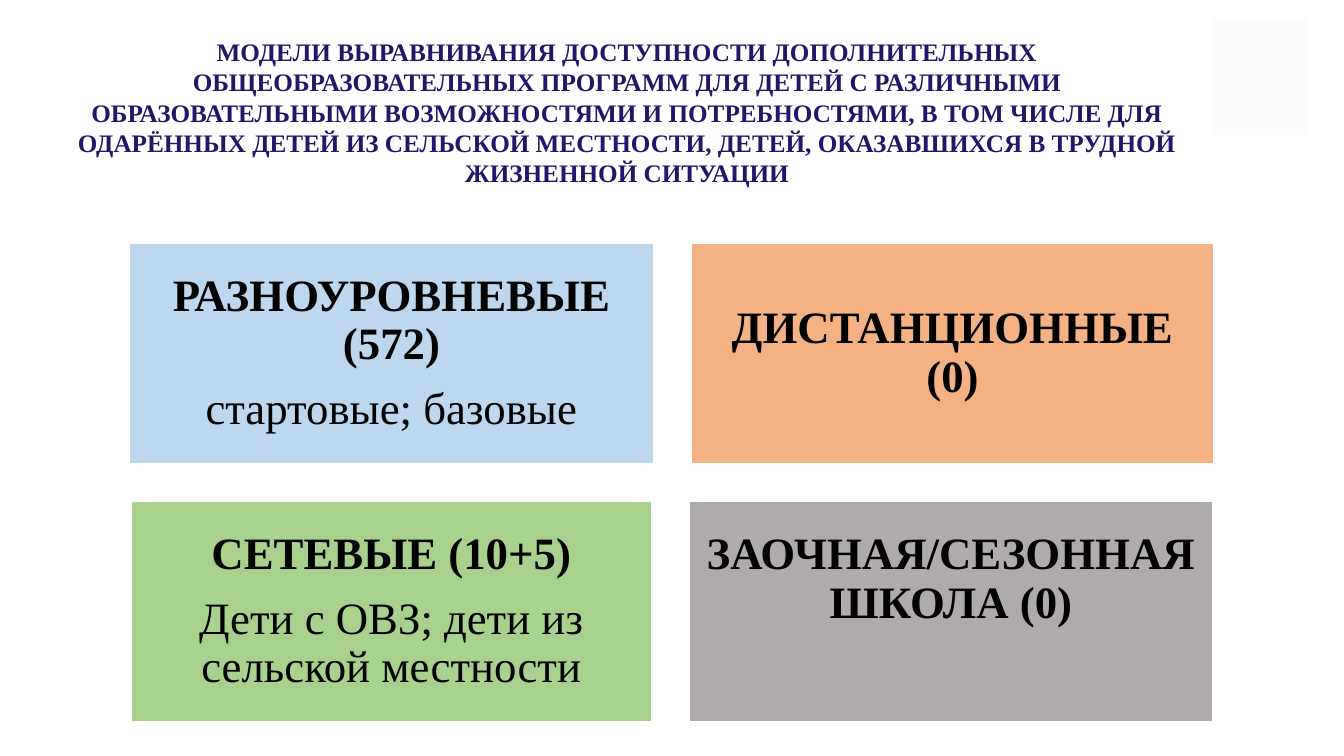
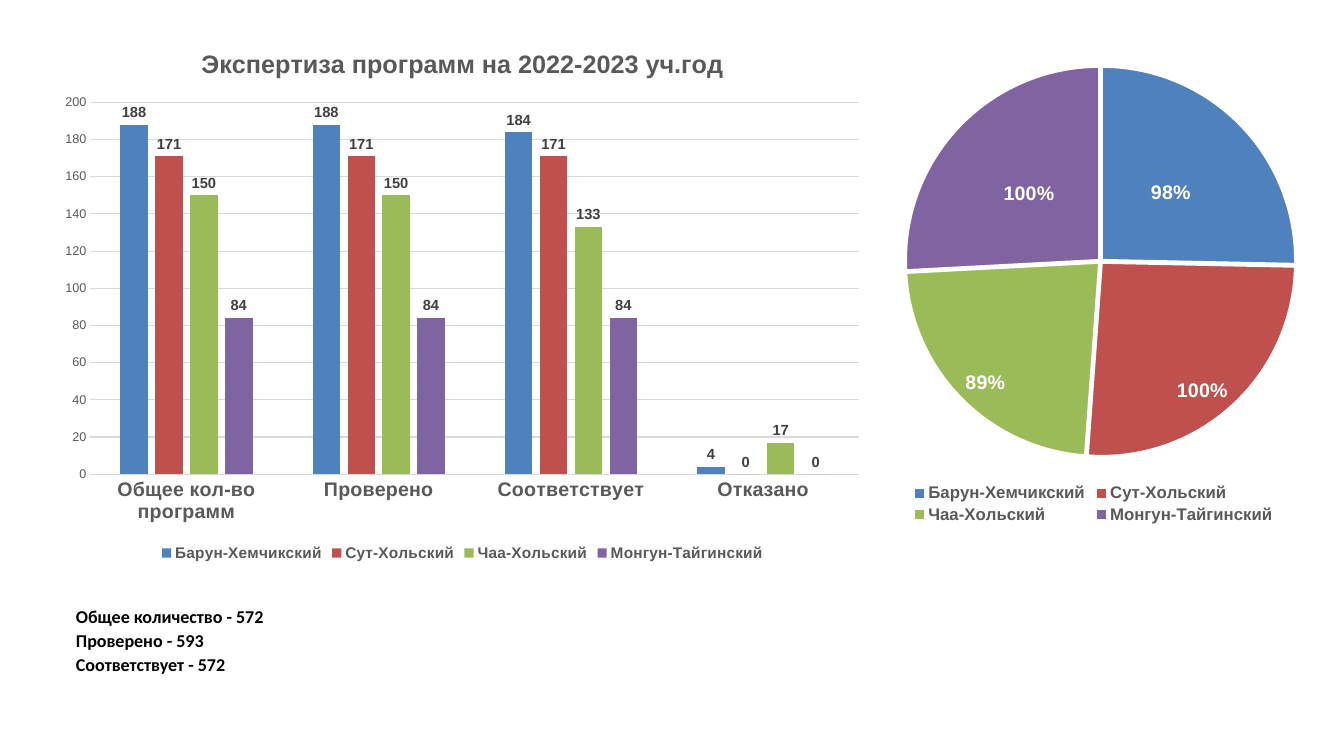
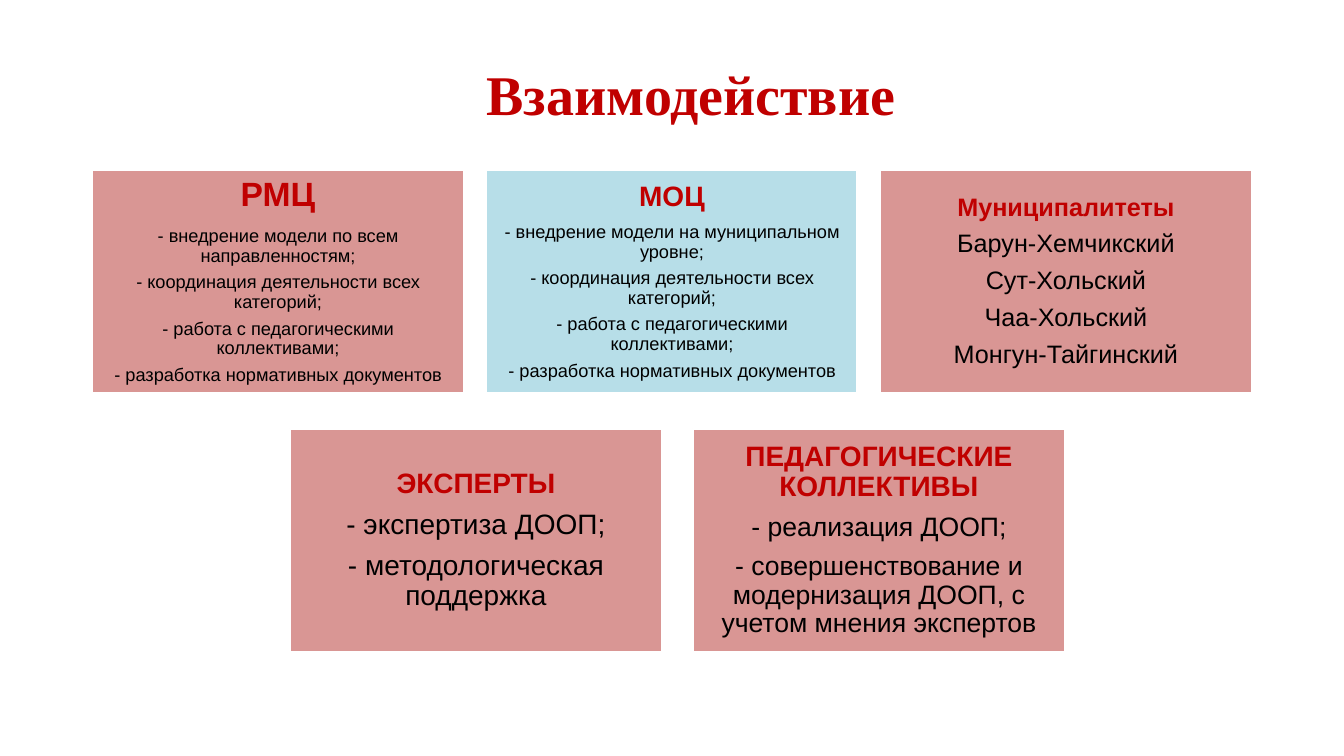
from lxml import etree
from pptx import Presentation
from pptx import util as u
from pptx.chart.data import CategoryChartData
from pptx.dml.color import RGBColor
from pptx.enum import chart as ch
from pptx.enum import shapes, text
from pptx.oxml.ns import qn

COLORS = {
    "white": "FFFFFF", "black": "000000", "navy": "221668", "red": "C00000",
    "corner": "FBFCFE", "corner_line": "FBFCFF",
    "sky": "BDD7EE", "orange": "F4B183", "leaf": "A9D18E", "stone": "AFABAB",
    "rose": "D99694", "aqua": "B7DEE8",
    "grey": "595959", "dark": "404040", "grid": "D9D9D9",
    "blue": "4F81BD", "brick": "C0504D", "green": "9BBB59", "violet": "8064A2",
}
SERIES_COLORS = ["blue", "brick", "green", "violet"]
SERIF, SANS, BODY = "Times New Roman", "Arial", "Calibri"
DISTRICTS = ["Барун-Хемчикский", "Сут-Хольский", "Чаа-Хольский", "Монгун-Тайгинский"]


class Deck:
    """Holds the style and the current slide."""

    SCALE = 914400 / 100.8

    def __init__(self, width, height):
        self.prs = Presentation()
        self.prs.slide_width, self.prs.slide_height = self.px(width), self.px(height)
        self.s = None

    def px(self, n):
        return u.Emu(round(n * self.SCALE))

    def rgb(self, name):
        return RGBColor.from_string(COLORS[name])

    def slide(self):
        self.s = self.prs.slides.add_slide(self.prs.slide_layouts[6])

    def font(self, font, **fmt):
        for key, value in fmt.items():
            if key == "color":
                font.color.rgb = self.rgb(value)
            else:
                setattr(font, key, u.Pt(value) if key == "size" else value)

    def frame(self, sp, margins, anchor):
        tf = sp.text_frame
        tf.word_wrap = True
        tf.vertical_anchor = anchor
        for side, value in zip(("left", "top", "right", "bottom"), margins):
            setattr(tf, "margin_" + side, self.px(value))
        return tf

    def paragraph(self, tf, i, words, para, **fmt):
        p = tf.paragraphs[0] if i == 0 else tf.add_paragraph()
        for key, value in para.items():
            setattr(p, key, value)
        r = p.add_run()
        r.text = words
        self.font(r.font, **fmt)

    def textbox(self, box):
        return self.s.shapes.add_textbox(*map(self.px, box))

    def title(self, box, words, **fmt):
        tf = self.frame(self.textbox(box), (13, 7, 13, 7), text.MSO_ANCHOR.MIDDLE)
        self.paragraph(tf, 0, words, {"alignment": text.PP_ALIGN.CENTER},
                       name=SERIF, bold=True, **fmt)

    def notes(self, box, lines):
        tf = self.frame(self.textbox(box), (27, 5, 10, 5), text.MSO_ANCHOR.TOP)
        for i, words in enumerate(lines):
            para = {"line_spacing": 0.8, "space_before": u.Pt(4.8 if i else 0)}
            self.paragraph(tf, i, words, para, name=BODY, size=12.9, bold=True, color="black")

    def rect(self, box, fill, line="white", weight=2):
        sp = self.s.shapes.add_shape(shapes.MSO_SHAPE.RECTANGLE, *map(self.px, box))
        sp.shadow.inherit = False
        sp.fill.solid()
        sp.fill.fore_color.rgb = self.rgb(fill)
        sp.line.color.rgb = self.rgb(line)
        sp.line.width = u.Pt(weight)
        return sp

    def card(self, box, fill, lines, sizes, name, head, weight, pad, lift=0):
        sp = self.rect(box, fill, weight=weight)
        tf = self.frame(sp, (pad, pad, pad, pad + lift), text.MSO_ANCHOR.MIDDLE)
        for i, words in enumerate(lines):
            size = sizes[min(i, 1)]
            para = {"alignment": text.PP_ALIGN.CENTER, "line_spacing": 0.9,
                    "space_after": u.Pt(round(size * 0.38, 1))}
            self.paragraph(tf, i, words, para, name=name, size=size, bold=i == 0,
                           color="black" if i else head)

    def chart(self, kind, box, cats, series, layout, legend_size, number_format="General"):
        data = CategoryChartData(number_format=number_format)
        data.categories = cats
        for name, values in series:
            data.add_series(name, values)
        chart = self.s.shapes.add_chart(kind, *map(self.px, box), data).chart
        self.font(chart.font, name=SANS, size=10, color="black")
        chart.has_title = False
        chart.has_legend = True
        chart.legend.position = ch.XL_LEGEND_POSITION.BOTTOM
        chart.legend.include_in_layout = False
        self.font(chart.legend.font, name=SANS, size=legend_size, bold=True, color="grey")
        area = chart._chartSpace.find(".//" + qn("c:plotArea"))
        for old in area.findall(qn("c:layout")):
            area.remove(old)
        holder = etree.Element(qn("c:layout"))
        manual = etree.SubElement(holder, qn("c:manualLayout"))
        marks = [("layoutTarget", "inner"), ("xMode", "edge"), ("yMode", "edge")]
        for tag, value in marks + list(zip("xywh", layout)):
            etree.SubElement(manual, qn("c:" + tag)).set("val", str(value))
        area.insert(0, holder)
        return chart

    def fill(self, part, color):
        part.format.fill.solid()
        part.format.fill.fore_color.rgb = self.rgb(color)

    def labels(self, series, position, **fmt):
        labels = series.data_labels
        labels.show_value = True
        labels.position = position
        self.font(labels.font, name=SANS, bold=True, **fmt)
        return labels

    def columns(self, box, heading, cats, series, layout):
        chart = self.chart(ch.XL_CHART_TYPE.COLUMN_CLUSTERED, box, cats, series, layout, 11)
        chart.has_title = True
        chart.chart_title.include_in_layout = False
        p = chart.chart_title.text_frame.paragraphs[0]
        r = p.add_run()
        r.text = heading
        self.font(r.font, name=SANS, size=18, bold=True, color="grey")
        plot = chart.plots[0]
        plot.vary_by_categories = False
        plot.gap_width, plot.overlap = 219, -27
        for ser, color in zip(plot.series, SERIES_COLORS):
            self.fill(ser, color)
            self.labels(ser, ch.XL_LABEL_POSITION.OUTSIDE_END, size=10.5, color="dark")
        cat, val = chart.category_axis, chart.value_axis
        for axis, size, bold in ((cat, 14, True), (val, 9, False)):
            axis.major_tick_mark = axis.minor_tick_mark = ch.XL_TICK_MARK.NONE
            self.font(axis.tick_labels.font, name=SANS, size=size, bold=bold, color="grey")
        val.minimum_scale, val.maximum_scale, val.major_unit = 0, 200, 20
        val.format.line.fill.background()
        for line in (cat.format.line, val.major_gridlines.format.line):
            line.color.rgb = self.rgb("grid")
            line.width = u.Pt(0.75)

    def pie(self, box, cats, values, layout, centred):
        chart = self.chart(ch.XL_CHART_TYPE.PIE, box, cats, [("Series 1", values)],
                           layout, 12, "0%")
        ser = chart.plots[0].series[0]
        ser.format.line.color.rgb = self.rgb("white")
        explosion = etree.Element(qn("c:explosion"))
        explosion.set("val", "1")
        ser._element.find(qn("c:spPr")).addnext(explosion)
        for i, color in enumerate(SERIES_COLORS):
            point = ser.points[i]
            self.fill(point, color)
            point.format.line.color.rgb = self.rgb("white")
            point.format.line.width = u.Pt(1.5)
        fmt = {"size": 14, "color": "white"}
        labels = self.labels(ser, ch.XL_LABEL_POSITION.INSIDE_END, **fmt)
        labels.number_format = "0%"
        labels.number_format_is_linked = False
        for i in centred:
            label = ser.points[i].data_label
            self.font(label.font, name=SANS, bold=True, **fmt)
            label.position = ch.XL_LABEL_POSITION.CENTER


def models(d):
    d.slide()
    d.title((34, 19, 1186, 186),
            "МОДЕЛИ ВЫРАВНИВАНИЯ ДОСТУПНОСТИ ДОПОЛНИТЕЛЬНЫХ ОБЩЕОБРАЗОВАТЕЛЬНЫХ ПРОГРАММ "
            "ДЛЯ ДЕТЕЙ С РАЗЛИЧНЫМИ ОБРАЗОВАТЕЛЬНЫМИ ВОЗМОЖНОСТЯМИ И ПОТРЕБНОСТЯМИ, В ТОМ "
            "ЧИСЛЕ ДЛЯ ОДАРЁННЫХ ДЕТЕЙ ИЗ СЕЛЬСКОЙ МЕСТНОСТИ, ДЕТЕЙ, ОКАЗАВШИХСЯ В ТРУДНОЙ "
            "ЖИЗНЕННОЙ СИТУАЦИИ", size=18, color="navy")
    d.rect((1212, 19, 95, 115), "corner", "corner_line")
    cards = [
        ((129, 243, 525, 221), "sky", ["РАЗНОУРОВНЕВЫЕ (572)", "стартовые; базовые"], 0),
        ((691, 243, 523, 221), "orange", ["ДИСТАНЦИОННЫЕ (0)"], 0),
        ((131, 501, 521, 221), "leaf",
         ["СЕТЕВЫЕ (10+5)", "Дети с ОВЗ; дети из сельской местности"], 0),
        ((689, 501, 524, 221), "stone", ["ЗАОЧНАЯ/СЕЗОННАЯ ШКОЛА (0)"], 64),
    ]
    for box, fill, lines, lift in cards:
        d.card(box, fill, lines, (32, 32), SERIF, "black", 1, 13, lift)


def expertise(d):
    d.slide()
    d.notes((49, 605, 241, 89),
            ["Общее количество - 572", "Проверено - 593", "Соответствует - 572"])
    values = [(188, 188, 184, 4), (171, 171, 171, 0), (150, 150, 133, 17), (84, 84, 84, 0)]
    d.columns((49, 27, 827, 539), "Экспертиза программ на 2022-2023 уч.год",
              ["Общее кол-во программ", "Проверено", "Соответствует", "Отказано"],
              list(zip(DISTRICTS, values)), (0.05, 0.14, 0.93, 0.69))
    d.pie((857, 52, 473, 476), DISTRICTS, (0.98, 1, 0.89, 1), (0.1, 0.03, 0.83, 0.82), (0, 3))


def cooperation(d):
    d.slide()
    d.title((143, 41, 1096, 104), "Взаимодействие", size=40, color="red")
    shared = ["- координация деятельности всех категорий;",
              "- работа с педагогическими коллективами;",
              "- разработка нормативных документов"]
    rows = [
        (92, 170, 394, [
            ("rose", ["РМЦ", "- внедрение модели по всем направленностям;"] + shared, (24, 13), 10),
            ("aqua", ["МОЦ", "- внедрение модели на муниципальном уровне;"] + shared, (20, 13), 8),
            ("rose", ["Муниципалитеты"] + DISTRICTS, (18, 18), 7),
        ]),
        (290, 429, 403, [
            ("rose", ["ЭКСПЕРТЫ", "- экспертиза ДООП;", "- методологическая поддержка"],
             (20, 20), 8),
            ("rose", ["ПЕДАГОГИЧЕСКИЕ КОЛЛЕКТИВЫ", "- реализация ДООП;",
                      "- совершенствование и модернизация ДООП, с учетом мнения экспертов"],
             (20, 19), 8),
        ]),
    ]
    for left, top, pitch, cards in rows:
        for i, (fill, lines, sizes, pad) in enumerate(cards):
            d.card((left + i * pitch, top, 372, 223), fill, lines, sizes, SANS, "red", 2, pad)


def main():
    d = Deck(1344, 756)
    for build in (models, expertise, cooperation):
        build(d)
    d.prs.save("out.pptx")


if __name__ == "__main__":
    main()
